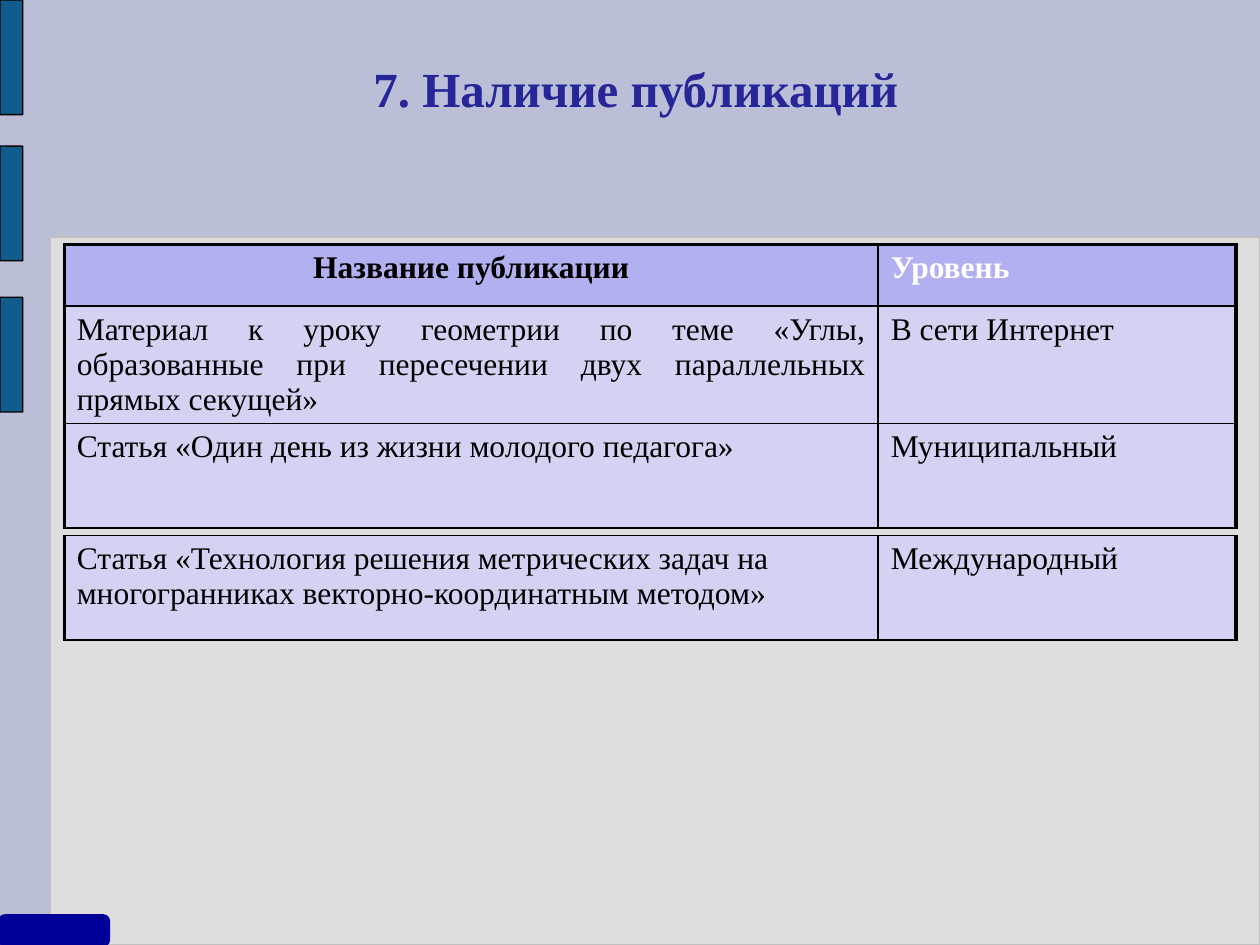
from lxml import etree
from pptx import Presentation
from pptx.dml.color import RGBColor
from pptx.enum.shapes import MSO_SHAPE
from pptx.enum.text import MSO_ANCHOR, PP_ALIGN
from pptx.oxml.ns import qn
from pptx.util import Inches, Pt

ROUNDED = MSO_SHAPE.ROUNDED_RECTANGLE
LEFT, CENTER, JUSTIFY = PP_ALIGN.LEFT, PP_ALIGN.CENTER, PP_ALIGN.JUSTIFY
MIDDLE = MSO_ANCHOR.MIDDLE
FONT = "Times New Roman"
FILL_OPACITY = 64
THICK, THIN = 2.25, 1
COLUMNS = (6.46, 2.84)
ROW = 0.83
COLORS = {
    "background": "BABED6", "panel": "DDDDDD", "panel_line": "C0C0C0",
    "bar": "125C8D", "corner": "000099", "title": "262699",
    "header": "9999FF", "body": "CCCCFF", "black": "000000", "white": "FFFFFF",
}


def color(name):
    return RGBColor.from_string(COLORS[name])


def format_font(font, name, **values):
    values = {"name": FONT, **values}
    for attribute, value in values.items():
        setattr(font, attribute, value)
    font.color.rgb = color(name)


def add_block(slide, box, fill, line, width=0.75, rounding=None):
    shape = slide.shapes.add_shape(ROUNDED, *map(Inches, box))
    shape.shadow.inherit = False
    if rounding is not None:
        shape.adjustments[0] = rounding
    shape.fill.solid()
    shape.fill.fore_color.rgb = color(fill)
    shape.line.color.rgb = color(line)
    shape.line.width = Pt(width)


def add_side_bars(slide, left, width, height, tops):
    for top in tops:
        add_block(slide, (left, top, width, height), "bar", "black", rounding=0.01)


def place_title(slide, box, text):
    title = slide.shapes.title
    title.left, title.top, title.width, title.height = map(Inches, box)
    frame = title.text_frame
    values = {"margin_left": 0, "margin_right": 0, "margin_top": 0,
              "margin_bottom": 0, "vertical_anchor": MIDDLE, "word_wrap": True}
    for attribute, value in values.items():
        setattr(frame, attribute, value)
    paragraph = frame.paragraphs[0]
    paragraph.alignment = CENTER
    paragraph.line_spacing = 0.93
    run = paragraph.add_run()
    run.text = text
    format_font(run.font, "title", size=Pt(28), bold=True)


def style_cell(cell, fill, borders):
    cell.fill.solid()
    cell.fill.fore_color.rgb = color(fill)
    properties = cell._tc.get_or_add_tcPr()
    shade = properties.find(qn("a:solidFill")).find(qn("a:srgbClr"))
    etree.SubElement(shade, qn("a:alpha"), val=str(FILL_OPACITY * 1000))
    for index, (side, width) in enumerate(borders.items()):
        line = etree.Element(qn(f"a:ln{side}"), w=str(Pt(width)))
        solid = etree.SubElement(line, qn("a:solidFill"))
        etree.SubElement(solid, qn("a:srgbClr"), val=COLORS["black"])
        properties.insert(index, line)


def add_publications(slide, left, top, heights, rows, has_header=False):
    box = (left, top, sum(COLUMNS), sum(heights))
    table = slide.shapes.add_table(len(rows), len(COLUMNS), *map(Inches, box)).table
    table.first_row = has_header
    table.horz_banding = False
    for column, width in zip(table.columns, COLUMNS):
        column.width = Inches(width)
    for row_index, (texts, alignment) in enumerate(rows):
        table.rows[row_index].height = Inches(heights[row_index])
        is_header = has_header and row_index == 0
        for column_index, text in enumerate(texts):
            is_first = column_index == 0
            cell = table.cell(row_index, column_index)
            borders = {
                "L": THICK if is_first else THIN,
                "R": THIN if is_first else THICK,
                "T": THICK if is_header else THIN,
                "B": THIN,
            }
            style_cell(cell, "header" if is_header else "body", borders)
            paragraph = cell.text_frame.paragraphs[0]
            paragraph.alignment = alignment if is_first else LEFT
            paragraph.space_after = Pt(6)
            run = paragraph.add_run()
            run.text = text
            text_color = "white" if is_header and not is_first else "black"
            format_font(run.font, text_color, size=Pt(18), bold=is_header)


def main():
    presentation = Presentation()
    presentation.slide_width, presentation.slide_height = Inches(10), Inches(7.5)
    slide = presentation.slides.add_slide(presentation.slide_layouts[5])
    slide.background.fill.solid()
    slide.background.fill.fore_color.rgb = color("background")

    add_block(slide, (0.4, 1.88, 9.6, 5.62), "panel", "panel_line", rounding=0)
    add_side_bars(slide, 0, 0.18, 0.91, (0, 1.16, 2.36))
    add_publications(slide, 0.51, 1.94, (0.49, ROW, ROW), [
        (("Название публикации", "Уровень"), CENTER),
        (("Материал к уроку геометрии по теме «Углы, образованные при "
          "пересечении двух параллельных прямых секущей»", "В сети Интернет"), JUSTIFY),
        (("Статья «Один день из жизни молодого педагога»", "Муниципальный"), LEFT),
    ], has_header=True)
    add_block(slide, (0, 7.27, 0.86, 0.23), "corner", "corner", width=2)
    place_title(slide, (0.83, 0.13, 8.53, 1.19), "7. Наличие публикаций ")
    add_publications(slide, 0.51, 4.25, (ROW,), [
        (("Статья «Технология решения метрических задач на многогранниках "
          "векторно-координатным методом»", "Международный"), LEFT),
    ])
    presentation.save("out.pptx")


if __name__ == "__main__":
    main()
